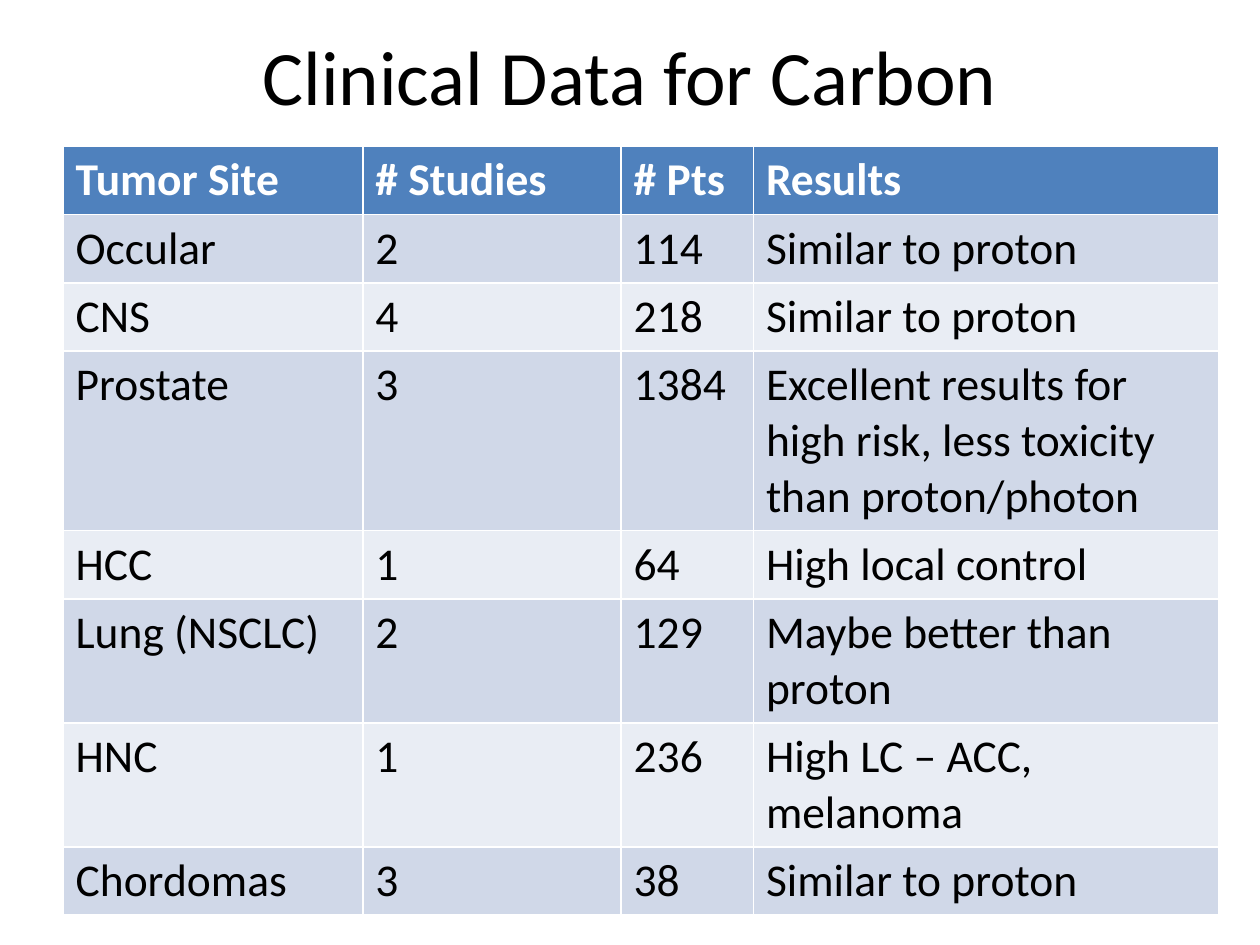
"""Build a slide with a table of clinical data for carbon therapy."""
from pptx import Presentation
from pptx import util as u
from pptx.dml import color
from pptx.enum import text

BLACK = color.RGBColor(0x00, 0x00, 0x00)
WHITE = color.RGBColor(0xFF, 0xFF, 0xFF)
HEADER_BLUE = color.RGBColor(0x4F, 0x81, 0xBD)
BAND_FILLS = (color.RGBColor(0xE9, 0xED, 0xF4), color.RGBColor(0xD0, 0xD8, 0xE8))
FONT = "Calibri"
MARGIN = 0.5
COLUMN_WIDTHS = (2.38, 2.05, 1.05, 3.69)
ROW_HEIGHT = 0.51
CLINICAL_ROWS = (
    ("Tumor Site", "# Studies", "# Pts", "Results"),
    ("Occular", "2", "114", "Similar to proton"),
    ("CNS", "4", "218", "Similar to proton"),
    ("Prostate", "3", "1384", "Excellent results for high risk, less toxicity than proton/photon"),
    ("HCC", "1", "64", "High local control"),
    ("Lung (NSCLC)", "2", "129", "Maybe better than proton"),
    ("HNC", "1", "236", "High LC – ACC, melanoma"),
    ("Chordomas", "3", "38", "Similar to proton"),
)


def add_run(paragraph, words, size, rgb, bold=False):
    run = paragraph.add_run()
    run.text = words
    run.font.name = FONT
    run.font.size = u.Pt(size)
    run.font.bold = bold
    run.font.color.rgb = rgb


presentation = Presentation()
presentation.slide_width = u.Inches(10)
presentation.slide_height = u.Inches(7.5)
slide = presentation.slides.add_slide(presentation.slide_layouts.get_by_name("Title Only"))

title = slide.shapes.title
title.left, title.top = u.Inches(MARGIN), u.Inches(0.11)
title.width, title.height = presentation.slide_width - 2 * title.left, u.Inches(0.96)
title.text_frame.vertical_anchor = text.MSO_ANCHOR.MIDDLE
title_paragraph = title.text_frame.paragraphs[0]
title_paragraph.alignment = text.PP_ALIGN.CENTER
add_run(title_paragraph, "Clinical Data for Carbon", 44, BLACK)

table = slide.shapes.add_table(
    len(CLINICAL_ROWS), len(COLUMN_WIDTHS), u.Inches(MARGIN), u.Inches(1.16),
    u.Inches(sum(COLUMN_WIDTHS)), u.Inches(ROW_HEIGHT * len(CLINICAL_ROWS)),
).table
for column, width in zip(table.columns, COLUMN_WIDTHS):
    column.width = u.Inches(width)

for row_index, entries in enumerate(CLINICAL_ROWS):
    is_header = row_index == 0
    table.rows[row_index].height = u.Inches(ROW_HEIGHT)
    for column_index, entry in enumerate(entries):
        cell = table.cell(row_index, column_index)
        cell.fill.solid()
        cell.fill.fore_color.rgb = HEADER_BLUE if is_header else BAND_FILLS[row_index % 2]
        add_run(cell.text_frame.paragraphs[0], entry, 26, WHITE if is_header else BLACK, is_header)

presentation.save("out.pptx")
